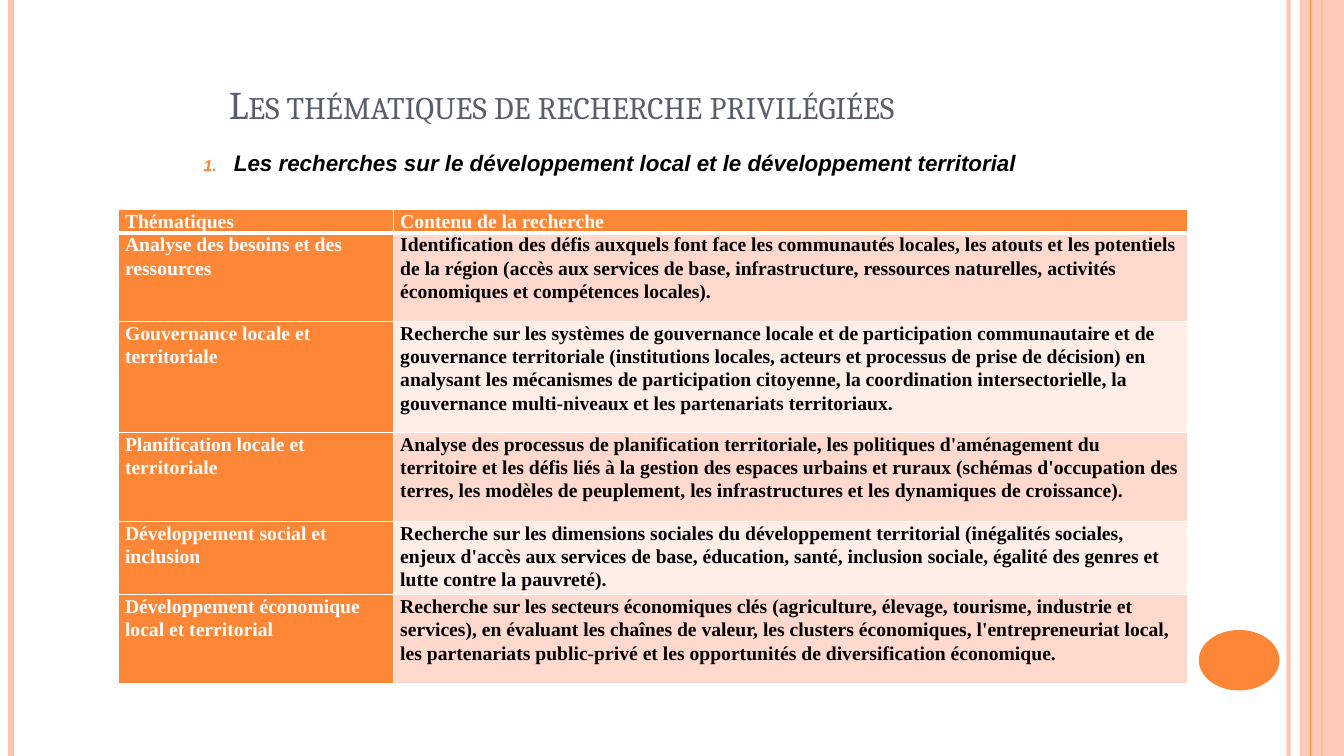
from lxml.etree import SubElement
from pptx import Presentation
from pptx.dml.color import RGBColor
from pptx.enum.shapes import MSO_CONNECTOR, MSO_SHAPE
from pptx.enum.text import MSO_ANCHOR, MSO_AUTO_SIZE, PP_ALIGN
from pptx.oxml import parse_xml
from pptx.oxml.ns import nsdecls, qn
from pptx.util import Inches, Pt

ORANGE, PEACH, WHITE, BLACK = "FE8637", "FEC3AE", "FFFFFF", "000000"
BANDS = ["FFD9CE", "FFEDE8"]


def color(hex_code):
    return RGBColor.from_string(hex_code)


def write(paragraph, text, font, size, hex_code, bold=False, italic=False):
    run = paragraph.add_run()
    run.text = text
    run.font.name, run.font.size = font, Pt(size)
    run.font.bold, run.font.italic = bold, italic
    run.font.color.rgb = color(hex_code)
    return run


deck = Presentation()
deck.slide_width, deck.slide_height = Inches(13.33), Inches(7.5)
slide = deck.slides.add_slide(deck.slide_layouts[1])
shapes = slide.shapes

# Side rules, band and disc: the band veils the rules drawn before it
rules = [(12.78, PEACH, 3, 93), (0.11, PEACH, 4.5, 100),
         (13.11, ORANGE, 1.5, 100), (13, ORANGE, 0.75, 100)]
ornaments = [(MSO_SHAPE.RECTANGLE, 12.89, 0, 0.44, 7.5, PEACH, 87),
             (MSO_SHAPE.OVAL, 11.89, 6.25, 0.8, 0.6, ORANGE, 100)]
for part in rules[:3] + ornaments[:1] + rules[3:] + ornaments[1:]:
    *geometry, tint, opacity = part
    if len(part) == 4:
        x, tint, width = part[:3]
        rule = shapes.add_connector(MSO_CONNECTOR.STRAIGHT, Inches(x), 0,
                                    Inches(x), deck.slide_height)
        rule.line.color.rgb, rule.line.width = color(tint), Pt(width)
        properties = rule._element.spPr
        SubElement(properties, qn("a:effectLst"))
    else:
        preset, *box = geometry
        ornament = shapes.add_shape(preset, *map(Inches, box))
        ornament.shadow.inherit = False
        ornament.fill.solid()
        ornament.fill.fore_color.rgb = color(tint)
        ornament.line.fill.background()
        properties = ornament._element.spPr
    if opacity < 100:
        paint = next(properties.iter(qn("a:srgbClr")))
        SubElement(paint, qn("a:alpha")).set("val", str(opacity * 1000))

# Title in small capitals
heading = shapes.title
heading.left, heading.top, heading.width, heading.height = map(Inches, (2.17, 0.35, 9, 0.96))
heading.text_frame.auto_size = MSO_AUTO_SIZE.NONE
heading.text_frame.vertical_anchor = MSO_ANCHOR.BOTTOM
heading_line = heading.text_frame.paragraphs[0]
heading_line.alignment = PP_ALIGN.LEFT
heading_run = write(heading_line, "Les thématiques de recherche privilégiées",
                    "Cambria", 28, "575F6D")
heading_run.font._element.set("cap", "small")

# Numbered subtitle
topic = slide.placeholders[1]
topic.left, topic.top, topic.width, topic.height = map(Inches, (1.92, 1.43, 9, 5.3))
topic.text_frame.auto_size = MSO_AUTO_SIZE.NONE
topic_line = topic.text_frame.paragraphs[0]
topic_line.space_before = Pt(6)
write(topic_line, "Les recherches sur le développement local et le développement territorial",
      "Arial", 16, BLACK, bold=True, italic=True)
numbering = topic_line._p.get_or_add_pPr()
numbering.set("marL", str(Inches(0.3)))
numbering.set("indent", str(-Inches(0.3)))
for bullet in (f'<a:buClr {nsdecls("a")}><a:srgbClr val="{ORANGE}"/></a:buClr>',
               f'<a:buSzPct {nsdecls("a")} val="70000"/>',
               f'<a:buFont {nsdecls("a")} typeface="+mj-lt"/>',
               f'<a:buAutoNum {nsdecls("a")} type="arabicPeriod"/>'):
    numbering.append(parse_xml(bullet))

# Table of research themes: row height, theme, content
themes = [
    (0.21, "Thématiques", "Contenu de la recherche"),
    (0.88, "Analyse des besoins et des ressources",
     "Identification des défis auxquels font face les communautés locales, les atouts et les "
     "potentiels de la région (accès aux services de base, infrastructure, ressources "
     "naturelles, activités économiques et compétences locales)."),
    (1.1, "Gouvernance locale et territoriale",
     "Recherche sur les systèmes de gouvernance locale et de participation communautaire et de "
     "gouvernance territoriale (institutions locales, acteurs et processus de prise de décision) "
     "en analysant les mécanismes de participation citoyenne, la coordination intersectorielle, "
     "la gouvernance multi-niveaux et les partenariats territoriaux."),
    (0.88, "Planification locale et territoriale",
     "Analyse des processus de planification territoriale, les politiques d'aménagement du "
     "territoire et les défis liés à la gestion des espaces urbains et ruraux (schémas "
     "d'occupation des terres, les modèles de peuplement, les infrastructures et les dynamiques "
     "de croissance)."),
    (0.73, "Développement social et inclusion",
     "Recherche sur les dimensions sociales du développement territorial (inégalités sociales, "
     "enjeux d'accès aux services de base, éducation, santé, inclusion sociale, égalité des "
     "genres et lutte contre la pauvreté)."),
    (0.88, "Développement économique local et territorial",
     "Recherche sur les secteurs économiques clés (agriculture, élevage, tourisme, industrie et "
     "services), en évaluant les chaînes de valeur, les clusters économiques, l'entrepreneuriat "
     "local, les partenariats public-privé et les opportunités de diversification économique."),
]
grid = shapes.add_table(len(themes), 2, Inches(1.17), Inches(2.08),
                        Inches(10.61), Inches(4.68)).table
grid.columns[0].width, grid.columns[1].width = Inches(2.73), Inches(7.88)
for r, (height, *texts) in enumerate(themes):
    grid.rows[r].height = Inches(height)
    for c, text in enumerate(texts):
        cell = grid.cell(r, c)
        cell.margin_left = cell.margin_right = Inches(0.07)
        cell.margin_top = cell.margin_bottom = 0
        # White borders, thicker on both sides of the header's lower edge
        for side in "LRTB":
            thick = (r, side) in [(0, "B"), (1, "T")]
            cell._tc.get_or_add_tcPr().append(parse_xml(
                f'<a:ln{side} {nsdecls("a")} w="{Pt(3 if thick else 1)}"><a:solidFill>'
                f'<a:srgbClr val="{WHITE}"/></a:solidFill></a:ln{side}>'))
        accent = r == 0 or c == 0
        cell.fill.solid()
        cell.fill.fore_color.rgb = color(ORANGE if accent else BANDS[(r - 1) % 2])
        line = cell.text_frame.paragraphs[0]
        line.line_spacing = 1.07
        write(line, text, "Times New Roman", 14, WHITE if accent else BLACK, bold=True)

deck.save("out.pptx")
